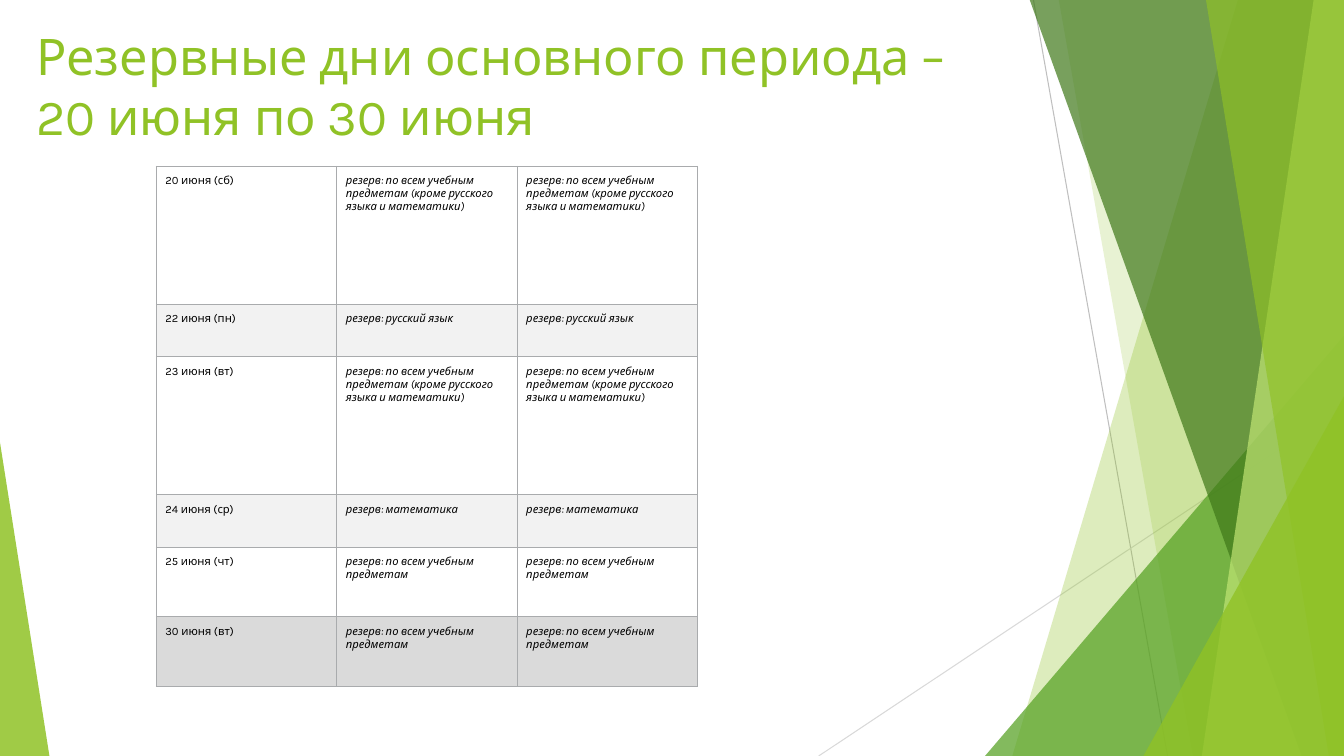
from dataclasses import dataclass

from lxml.etree import SubElement
from pptx import Presentation
from pptx.dml.color import RGBColor
from pptx.enum.shapes import MSO_CONNECTOR, MSO_SHAPE
from pptx.enum.text import MSO_ANCHOR, PP_ALIGN
from pptx.oxml.ns import qn
from pptx.util import Inches, Pt


@dataclass(frozen=True)
class Theme:
    font: str = "Karla"
    title_size: int = 36
    cell_size: int = 8
    line_width: float = 0.75
    lime: str = "90C226"
    green: str = "54A021"
    forest: str = "3F7819"
    pale: str = "C0E474"
    line_dark: str = "BFBFBF"
    line_light: str = "D9D9D9"
    border: str = "A9ABAD"
    text: str = "000000"
    white: str = "FFFFFF"
    band: str = "F2F2F2"
    last: str = "DADADA"


class SlideBuilder:
    def __init__(self, s, theme):
        self.s = s
        self.theme = theme

    def line(self, start, end, color):
        c = self.s.shapes.add_connector(
            MSO_CONNECTOR.STRAIGHT, *map(Inches, start + end))
        c.line.color.rgb = RGBColor.from_string(color)
        c.line.width = Pt(self.theme.line_width)
        SubElement(c._element.spPr, qn("a:effectLst"))

    def paint(self, sp, color, opacity):
        sp.shadow.inherit = False
        sp.line.fill.background()
        sp.fill.solid()
        sp.fill.fore_color.rgb = RGBColor.from_string(color)
        clr = sp._element.spPr.find(qn("a:solidFill"))[0]
        SubElement(clr, qn("a:alpha"), val=str(opacity * 1000))

    def polygon(self, points, color, opacity):
        first, *rest = [(Inches(x), Inches(y)) for x, y in points]
        fb = self.s.shapes.build_freeform(*first)
        fb.add_line_segments(rest)
        self.paint(fb.convert_to_shape(), color, opacity)

    def triangle(self, box, apex, color, opacity):
        sp = self.s.shapes.add_shape(
            MSO_SHAPE.ISOSCELES_TRIANGLE, *map(Inches, box))
        sp.adjustments[0] = apex
        self.paint(sp, color, opacity)

    def style(self, p, size, color, italic=False):
        p.alignment = PP_ALIGN.LEFT
        for r in p.runs:
            r.font.name = self.theme.font
            r.font.size = Pt(size)
            r.font.italic = italic
            r.font.color.rgb = RGBColor.from_string(color)

    def title(self, box, text):
        tf = self.s.shapes.add_textbox(*map(Inches, box)).text_frame
        tf.word_wrap = True
        tf.vertical_anchor = MSO_ANCHOR.TOP
        tf.text = text
        self.style(tf.paragraphs[0], self.theme.title_size, self.theme.lime)

    def border(self, cell):
        tcPr = cell._tc.get_or_add_tcPr()
        for side in ("lnL", "lnR", "lnT", "lnB"):
            ln = SubElement(tcPr, qn(f"a:{side}"),
                            w=str(Pt(self.theme.line_width)))
            fill = SubElement(ln, qn("a:solidFill"))
            SubElement(fill, qn("a:srgbClr"), val=self.theme.border)

    def cell(self, cell, text, fill, italic):
        cell.text = text
        cell.margin_left = cell.margin_right = Inches(0.09)
        cell.margin_top = cell.margin_bottom = Inches(0.08)
        self.style(cell.text_frame.paragraphs[0], self.theme.cell_size,
                   self.theme.text, italic)
        self.border(cell)
        cell.fill.solid()
        cell.fill.fore_color.rgb = RGBColor.from_string(fill)

    def table(self, box, rows):
        tbl = self.s.shapes.add_table(len(rows), 3, *map(Inches, box)).table
        for i, (day, subject, height, fill) in enumerate(rows):
            tbl.rows[i].height = Inches(height)
            for j, text in enumerate((day, subject, subject)):
                self.cell(tbl.cell(i, j), text, fill, j > 0)


def main():
    t = Theme()
    prs = Presentation()
    prs.slide_width, prs.slide_height = Inches(13.33), Inches(7.5)
    b = SlideBuilder(prs.slides.add_slide(prs.slide_layouts[6]), t)

    right, top, bottom = 13.33, -0.01, 7.5

    def ray(x_top, x_bottom, color, opacity):
        b.polygon([(x_top, top), (right, top), (right, bottom),
                   (x_bottom, bottom)], color, opacity)

    b.line((10.25, 0), (11.58, bottom), t.line_dark)
    b.line((right, 4.03), (8.12, bottom), t.line_light)
    ray(12.28, 10.04, t.lime, 30)
    ray(10.5, 11.83, t.lime, 20)
    b.triangle((9.77, 3.33, 3.56, 4.17), 1, t.green, 72)
    ray(10.21, 12.91, t.forest, 70)
    ray(13.03, 11.92, t.pale, 70)
    ray(11.96, 13.18, t.lime, 65)
    b.triangle((11.34, 3.93, 1.99, 3.57), 1, t.lime, 80)
    b.triangle((0, 4.39, 0.49, 3.11), 0, t.lime, 85)

    b.title((0.26, 0.2, 9.4, 1.44),
            "Резервные дни основного периода – 20 июня по 30 июня")

    every = "резерв: по всем учебным предметам"
    most = f"{every} (кроме русского языка и математики)"
    b.table((1.55, 1.65, 5.37, 5.17), [
        ("20 июня (сб)", most, 1.37, t.white),
        ("22 июня (пн)", "резерв: русский язык", 0.52, t.band),
        ("23 июня (вт)", most, 1.37, t.white),
        ("24 июня (ср)", "резерв: математика", 0.52, t.band),
        ("25 июня (чт)", every, 0.69, t.white),
        ("30 июня (вт)", every, 0.69, t.last),
    ])
    prs.save("out.pptx")


if __name__ == "__main__":
    main()
